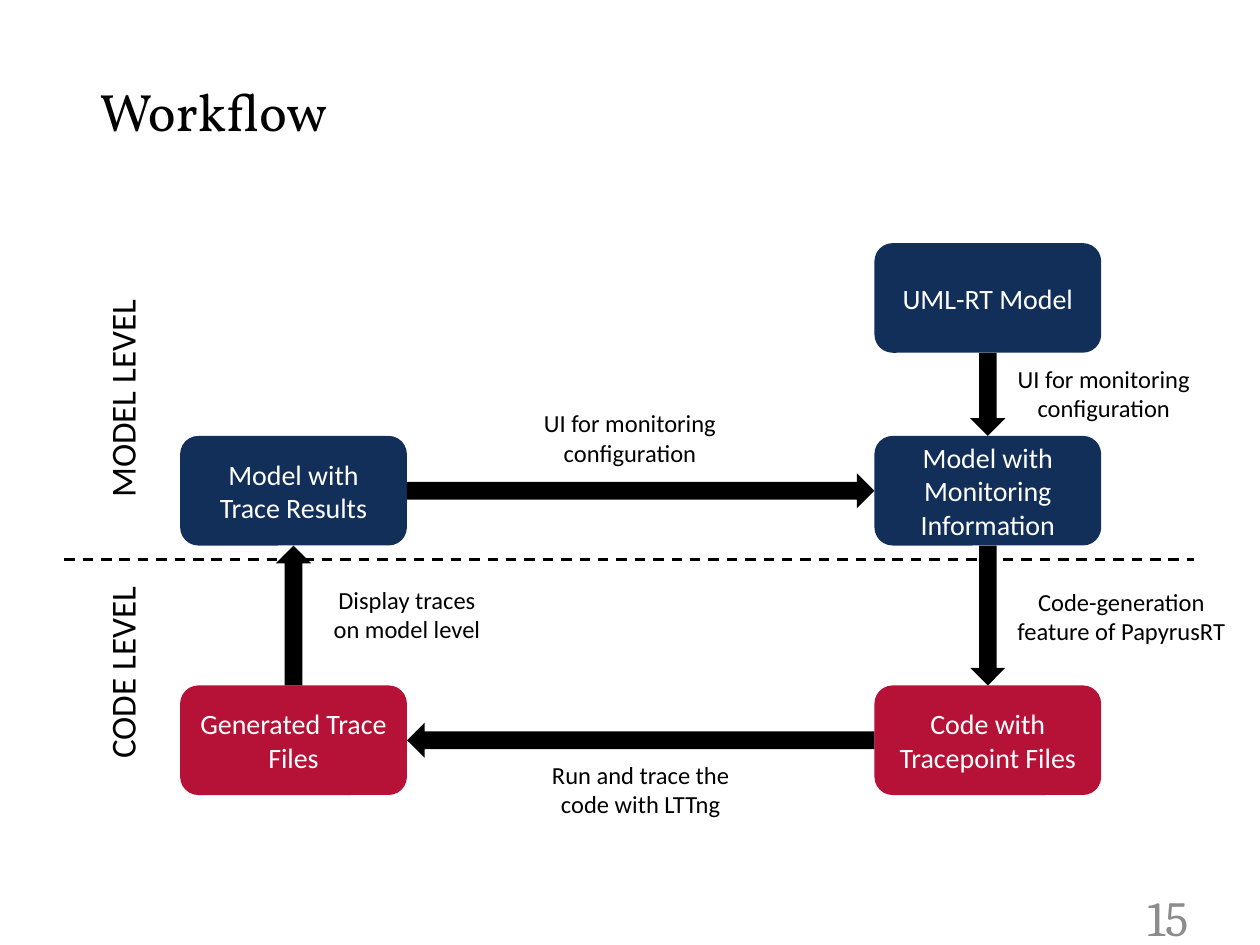
import pptx
import pptx.util
import pptx.dml.color
import pptx.enum.dml
import pptx.enum.shapes
import pptx.enum.text
import pptx.oxml.ns
import lxml.etree

Inches = pptx.util.Inches
Align = pptx.enum.text.PP_ALIGN
Anchor = pptx.enum.text.MSO_ANCHOR
Shape = pptx.enum.shapes.MSO_SHAPE

HUES = {"navy": "112F58", "red": "B61136", "black": "000000",
        "white": "FFFFFF", "gray": "8C8C8C"}

LEFT, RIGHT = 1.43, 6.94          # box columns
TOP, MID, LOW = 1.93, 3.46, 5.44  # box rows
WIDE, HIGH, THICK = 1.8, 0.87, 0.28

BOXES = [
    ("UML-RT Model", RIGHT, TOP, "navy"),
    ("Model with Monitoring Information", RIGHT, MID, "navy"),
    ("Code with Tracepoint Files", RIGHT, LOW, "red"),
    ("Generated Trace Files", LEFT, LOW, "red"),
    ("Model with Trace Results", LEFT, MID, "navy"),
]
# Column and row of the box at each end
ARROWS = [
    ((RIGHT, TOP), (RIGHT, MID)),
    ((RIGHT, MID), (RIGHT, LOW)),
    ((RIGHT, LOW), (LEFT, LOW)),
    ((LEFT, LOW), (LEFT, MID)),
    ((LEFT, MID), (RIGHT, MID)),
]
LABELS = [
    ("UI for monitoring configuration", 7.97, 2.84, 1.58),
    ("Code-generation feature of PapyrusRT", 7.97, 4.61, 1.86),
    ("Run and trace the code with LTTng", 4.28, 5.98, 1.61),
    ("Display traces on model level", 2.47, 4.59, 1.52),
    ("UI for monitoring configuration", 4.21, 3.19, 1.58),
]
LEVELS = [("MODEL LEVEL", 2.86), ("CODE LEVEL", 4.93)]


def color(name):
    return pptx.dml.color.RGBColor.from_string(HUES[name])


def write(shape, text, size=14, font="Calibri", hue="black",
          align=Align.CENTER, anchor=Anchor.TOP):
    frame = shape.text_frame
    frame.word_wrap = True
    frame.vertical_anchor = anchor
    para = frame.paragraphs[0]
    para.text = text
    para.alignment = align
    para.font.size = pptx.util.Pt(size)
    para.font.name = font
    para.font.color.rgb = color(hue)
    return para


def label(slide, text, x, y, w, h, **form):
    box = slide.shapes.add_textbox(*map(Inches, (x, y, w, h)))
    write(box, text, **form)
    return box


def solid(slide, kind, x, y, w, h, hue):
    shape = slide.shapes.add_shape(kind, *map(Inches, (x, y, w, h)))
    shape.shadow.inherit = False
    shape.fill.solid()
    shape.fill.fore_color.rgb = color(hue)
    shape.line.fill.background()
    return shape


def arrow(slide, start, end):
    """Fill the gap between two boxes with a block arrow."""
    (x1, y1), (x2, y2) = start, end
    flat = y1 == y2
    span = abs(x2 - x1) - WIDE if flat else abs(y2 - y1) - HIGH
    mid_x = (x1 + x2 + WIDE) / 2
    mid_y = (y1 + y2 + HIGH) / 2
    shape = solid(slide, Shape.RIGHT_ARROW, mid_x - span / 2,
                  mid_y - THICK / 2, span, THICK, "black")
    if flat:
        shape.rotation = 0 if x2 > x1 else 180
    else:
        shape.rotation = 90 if y2 > y1 else 270


def border(slide):
    """Draw the dashed line between the two levels."""
    line = slide.shapes.add_connector(
        pptx.enum.shapes.MSO_CONNECTOR.STRAIGHT,
        *map(Inches, (0.51, 4.44, 9.48, 4.44)))
    line.line.color.rgb = color("black")
    line.line.width = pptx.util.Pt(1.5)
    line.line.dash_style = pptx.enum.dml.MSO_LINE.DASH
    props = line._element.spPr
    lxml.etree.SubElement(props, pptx.oxml.ns.qn("a:effectLst"))


def main():
    deck = pptx.Presentation()
    deck.slide_width, deck.slide_height = Inches(10), Inches(7.5)
    slide = deck.slides.add_slide(deck.slide_layouts[5])

    title = slide.shapes.title
    title.left, title.top = Inches(0.69), Inches(0.31)
    title.width, title.height = Inches(8.62), Inches(1.2)
    para = write(title, "Workflow", size=30, font="Vollkorn",
                 align=Align.LEFT, anchor=Anchor.MIDDLE)
    para.line_spacing = 0.9

    border(slide)
    for text, x, y, hue in BOXES:
        box = solid(slide, Shape.ROUNDED_RECTANGLE, x, y, WIDE, HIGH, hue)
        write(box, text, size=16, hue="white", anchor=Anchor.MIDDLE)
    for start, end in ARROWS:
        arrow(slide, start, end)
    for text, x, y, w in LABELS:
        label(slide, text, x, y, w, 0.57)
    for text, y in LEVELS:
        box = label(slide, text, 0, y, 1.94, 0.44, size=20, align=Align.LEFT)
        box.rotation = 270
    label(slide, "15", 7.28, 7.08, 2.25, 0.4, size=28, font="Cambria",
          hue="gray", align=Align.RIGHT, anchor=Anchor.MIDDLE)

    deck.save("out.pptx")


if __name__ == "__main__":
    main()
